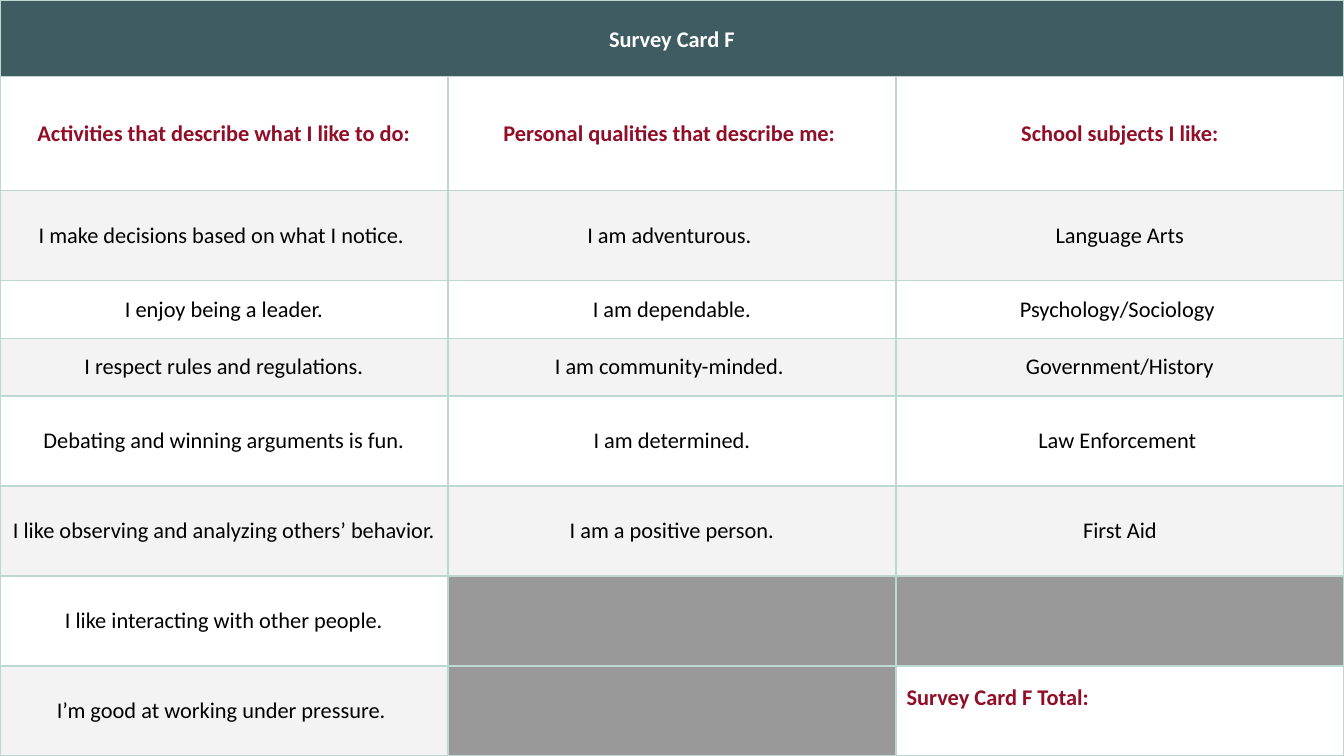
from lxml import etree
from pptx import Presentation
from pptx.dml.color import RGBColor
from pptx.enum.text import MSO_ANCHOR, PP_ALIGN
from pptx.oxml.ns import qn
from pptx.util import Inches, Pt

CENTER, LEFT = PP_ALIGN.CENTER, PP_ALIGN.LEFT
MIDDLE = MSO_ANCHOR.MIDDLE

TEAL = RGBColor(0x3E, 0x5C, 0x61)
CRIMSON = RGBColor(0x91, 0x0D, 0x28)
MINT = RGBColor(0xBE, 0xD7, 0xD3)
LIGHT_GRAY = RGBColor(0xF3, 0xF3, 0xF3)
DARK_GRAY = RGBColor(0x99, 0x99, 0x99)
WHITE = RGBColor(0xFF, 0xFF, 0xFF)
BLACK = RGBColor(0, 0, 0)

TITLE = "Survey Card F"
TOTAL = "Survey Card F Total:"
HEADINGS = [
    "Activities that describe what I like to do:",
    "Personal qualities that describe me: ",
    "School subjects I like:",
]
ANSWERS = [
    ("I make decisions based on what I notice. ", "I am adventurous. ", "Language Arts"),
    ("I enjoy being a leader.", "I am dependable.", "Psychology/Sociology "),
    ("I respect rules and regulations.", "I am community-minded. ", "Government/History"),
    ("Debating and winning arguments is fun.", "I am determined.", "Law Enforcement "),
    ("I like observing and analyzing others’ behavior. ", "I am a positive person.", "First Aid"),
    ("I like interacting with other people.", "", ""),
    ("I’m good at working under pressure. ", "", TOTAL),
]
ROW_HEIGHTS = [0.57, 0.85, 0.67, 0.43, 0.43, 0.67, 0.67, 0.67, 0.67]
WIDTH = 10
HEIGHT = WIDTH * 9 / 16
MARGIN = Inches(0.08)


def add_borders(cell):
    properties = cell._tc.get_or_add_tcPr()
    for index, side in enumerate(("a:lnL", "a:lnR", "a:lnT", "a:lnB")):
        line = etree.Element(qn(side), w=str(Pt(1)))
        fill = etree.SubElement(line, qn("a:solidFill"))
        etree.SubElement(fill, qn("a:srgbClr"), val=str(MINT))
        properties.insert(index, line)


def style_cell(cell, text, fill, color=BLACK, bold=False, align=CENTER):
    cell.fill.solid()
    cell.fill.fore_color.rgb = fill
    cell.vertical_anchor = MIDDLE
    cell.margin_left = cell.margin_right = MARGIN
    cell.margin_top = cell.margin_bottom = MARGIN
    add_borders(cell)
    cell.text = text
    paragraph = cell.text_frame.paragraphs[0]
    paragraph.alignment = align
    font = paragraph.font
    font.name = "Calibri"
    font.size = Pt(12)
    font.bold = bold
    font.color.rgb = color
    return paragraph


presentation = Presentation()
presentation.slide_width = Inches(WIDTH)
presentation.slide_height = Inches(HEIGHT)
slide = presentation.slides.add_slide(presentation.slide_layouts[6])

table = slide.shapes.add_table(
    len(ROW_HEIGHTS), len(HEADINGS), 0, 0, Inches(WIDTH), Inches(HEIGHT)
).table
scale = HEIGHT / sum(ROW_HEIGHTS)
for row, height in zip(table.rows, ROW_HEIGHTS):
    row.height = Inches(height * scale)

for column in range(len(HEADINGS)):
    title = style_cell(table.cell(0, column), "" if column else TITLE, TEAL, WHITE, True)
    title.line_spacing = 1.15
    title.space_after = Pt(6)
table.cell(0, 0).merge(table.cell(0, len(HEADINGS) - 1))

for column, heading in enumerate(HEADINGS):
    paragraph = style_cell(table.cell(1, column), heading, WHITE, CRIMSON, True)
    paragraph.space_before = Pt(10)

for index, answers in enumerate(ANSWERS):
    band = WHITE if index % 2 else LIGHT_GRAY
    for column, text in enumerate(answers):
        cell = table.cell(index + 2, column)
        if text == TOTAL:
            paragraph = style_cell(cell, text, WHITE, CRIMSON, True, LEFT)
            paragraph.space_before = Pt(10)
            cell.margin_bottom = Inches(0.28)
        else:
            style_cell(cell, text, band if text else DARK_GRAY)

presentation.save("out.pptx")
